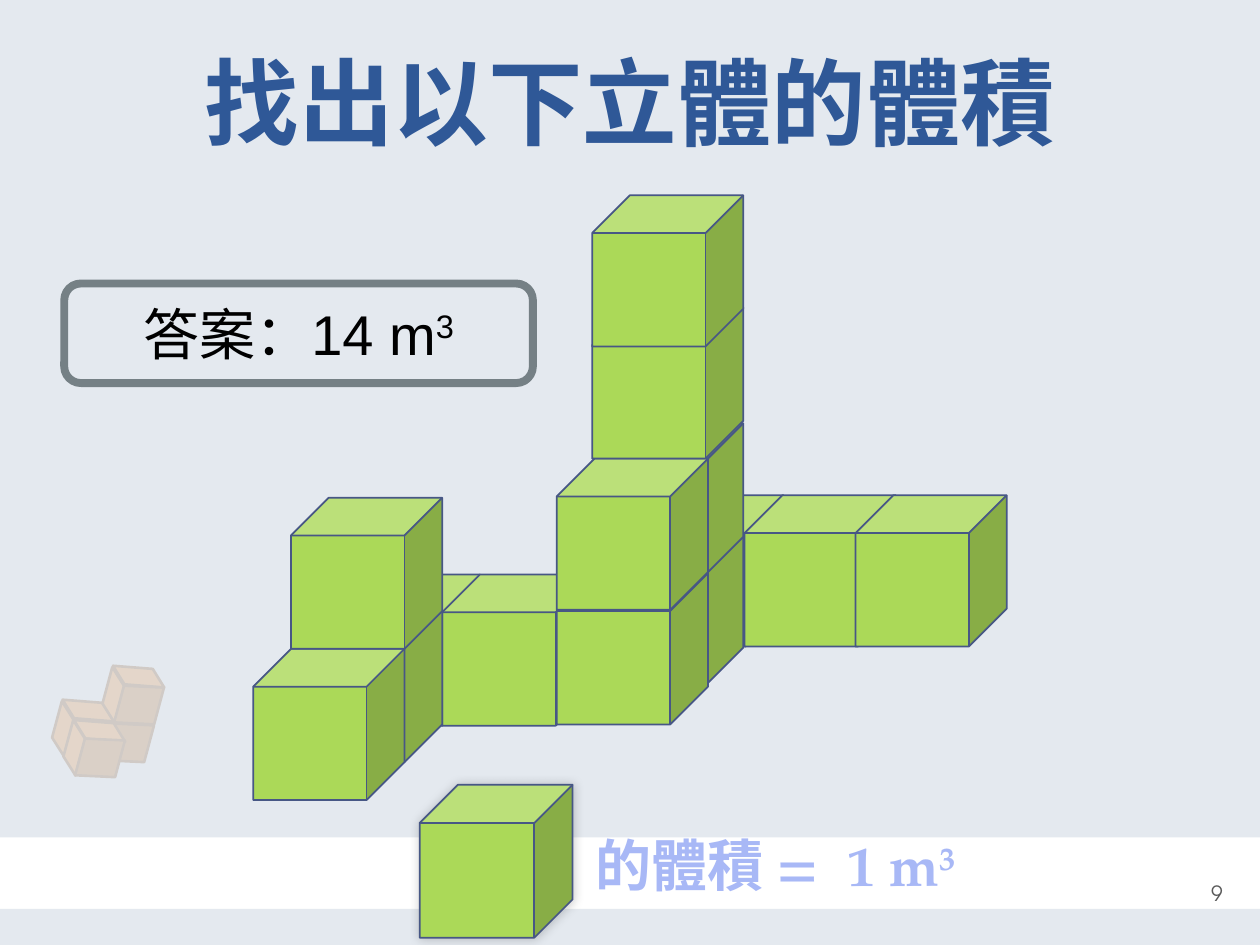
from lxml.etree import SubElement
from pptx import Presentation
from pptx.dml.color import RGBColor
from pptx.enum.shapes import MSO_SHAPE as Shape
from pptx.enum.text import MSO_ANCHOR as Anchor, PP_ALIGN as Align
from pptx.oxml import parse_xml
from pptx.oxml.ns import nsdecls, qn
from pptx.util import Pt

PANEL, GREEN, EDGE = "E4E9EF", "ABD958", "475785"
BROWN, ORANGE, DARK_ORANGE = "77420D", "E68422", "B26314"
SERIF, SANS, ROUND = "TeX Gyre Pagella", "Arial", "TeX Gyre Adventor"


def color(value):
    return RGBColor.from_string(value)


def write(para, text, font, size, fill, bold=False, raised=False, spacing=None):
    span = para.add_run()
    span.text = text
    span.font.name, span.font.size, span.font.bold = font, Pt(size), bold
    span.font.color.rgb = color(fill)
    properties = span.font._element
    if raised:
        properties.set("baseline", "30000")
    if spacing:
        properties.set("spc", str(spacing * 100))
    return span


class Painter:
    """Holds the current slide and draws its elements; lengths in points."""

    def __init__(self, page):
        self.page = page

    def shape(self, kind, box, fill=None, line=None, weight=1, alpha=None):
        item = self.page.shapes.add_shape(kind, *map(Pt, box))
        item.shadow.inherit = False
        if fill:
            item.fill.solid()
            item.fill.fore_color.rgb = color(fill)
        else:
            item.fill.background()
        if alpha:
            tone = item._element.spPr.find(qn("a:solidFill"))[0]
            SubElement(tone, qn("a:alpha")).set("val", str(alpha * 1000))
        if line:
            item.line.color.rgb = color(line)
            item.line.width = Pt(weight)
        else:
            item.line.fill.background()
        return item

    def cube(self, x, y, size=86.4):
        return self.shape(Shape.CUBE, (x, y, size, size), GREEN, EDGE)

    def face(self, x, y, width, height, turn, skew, fill, flips):
        item = self.shape(Shape.PARALLELOGRAM, (x, y, width, height), fill, BROWN, 1.5)
        item.adjustments[0] = skew
        item.rotation = turn
        for flip in flips:
            item._element.spPr.xfrm.set(flip, "1")

    def glow(self, item):
        effects = item._element.spPr.find(qn("a:effectLst"))
        effects.append(parse_xml(
            f'<a:outerShdw {nsdecls("a")} blurRad="{Pt(6)}" dist="0" dir="18900000">'
            '<a:srgbClr val="000000"><a:alpha val="20000"/></a:srgbClr></a:outerShdw>'))

    def text(self, box, margins):
        frame = self.page.shapes.add_textbox(*map(Pt, box)).text_frame
        frame.word_wrap = True
        frame.vertical_anchor = Anchor.MIDDLE
        (frame.margin_left, frame.margin_top,
         frame.margin_right, frame.margin_bottom) = map(Pt, margins)
        return frame.paragraphs[0]

    def title(self, text, box):
        title = self.page.shapes.title
        self.page.shapes._spTree.append(title._element)  # bring above the panels
        title.left, title.top, title.width, title.height = map(Pt, box)
        title.text_frame.vertical_anchor = Anchor.BOTTOM
        para = title.text_frame.paragraphs[0]
        para.alignment = Align.CENTER
        para.line_spacing = Pt(58)
        write(para, text, SERIF, 54, "2F5897", bold=True)


deck = Presentation()
deck.slide_width, deck.slide_height = Pt(720), Pt(540)
page = deck.slides.add_slide(deck.slide_layouts[5])
painter = Painter(page)

# Background panels
painter.shape(Shape.RECTANGLE, (0, 519.4, 720, 20.6), PANEL)
painter.shape(Shape.RECTANGLE, (0, 0, 720, 478.6), PANEL)

# Faded blocks in the corner: face kinds, then their places from back to front
FACES = {
    "side": (30.2, 9.4, 105, 0.923, ORANGE, ("flipH", "flipV")),
    "top": (30.2, 10.1, 184.5, 0.735, ORANGE, ("flipV",)),
    "front": (26.6, 22.3, 105, 0.219, DARK_ORANGE, ("flipH",)),
}
BLOCKS = [
    ("side", 20.9, 411.8), ("top", 35.3, 401), ("side", 49.7, 392.4),
    ("top", 64.1, 381.6), ("front", 60.5, 413.3), ("top", 41.8, 412.6),
    ("side", 27.4, 422.6), ("front", 43.9, 421.9), ("front", 66.2, 391.7),
]
for kind, x, y in BLOCKS:
    painter.face(x, y, *FACES[kind])
painter.shape(Shape.RECTANGLE, (0, 276.5, 108, 189.4), PANEL, alpha=82)

# Title and page number
painter.title("找出以下立體的體積", (36, 0, 648, 93.6))
number = painter.text((689.8, 496.1, 43.9, 28.8), (2.2, 3.6, 3.6, 3.6))
write(number, "9", ROUND, 12, "595959")

# Unit cube and its volume
painter.glow(painter.cube(239.8, 448.4, 87.4))
unit = painter.text((339.8, 457.2, 224.6, 78.5), (0.7, 0.7, 0.7, 0.7))
unit.line_spacing = 0.9
unit_style = dict(font=SERIF, size=32, fill="A8B8F6", bold=True)
write(unit, "的體積 =", **unit_style)
write(unit, " ", spacing=8, **unit_style)
write(unit, "1 m", **unit_style)
write(unit, "3", raised=True, **unit_style)

# Answer
answer = painter.shape(Shape.ROUNDED_RECTANGLE, (36.7, 162, 267.8, 56.9),
                       line="758085", weight=4.5)
answer.text_frame.vertical_anchor = Anchor.MIDDLE
para = answer.text_frame.paragraphs[0]
para.alignment = Align.CENTER
write(para, "答案：14 m", SANS, 32, "000000")
write(para, "3", SANS, 32, "000000", raised=True)

# Solid made of unit cubes, from back to front
CUBES = [
    (361.4, 283), (338.4, 305.3), (187.9, 328.3), (252.7, 328.3), (318.2, 327.6),
    (166.3, 349.2), (144.7, 370.8), (425.5, 283), (488.9, 283), (338.4, 241.9),
    (318.2, 262.1), (338.4, 175.7), (338.4, 111.6), (166.3, 284.4),
]
for x, y in CUBES:
    painter.cube(x, y)

deck.save("out.pptx")
